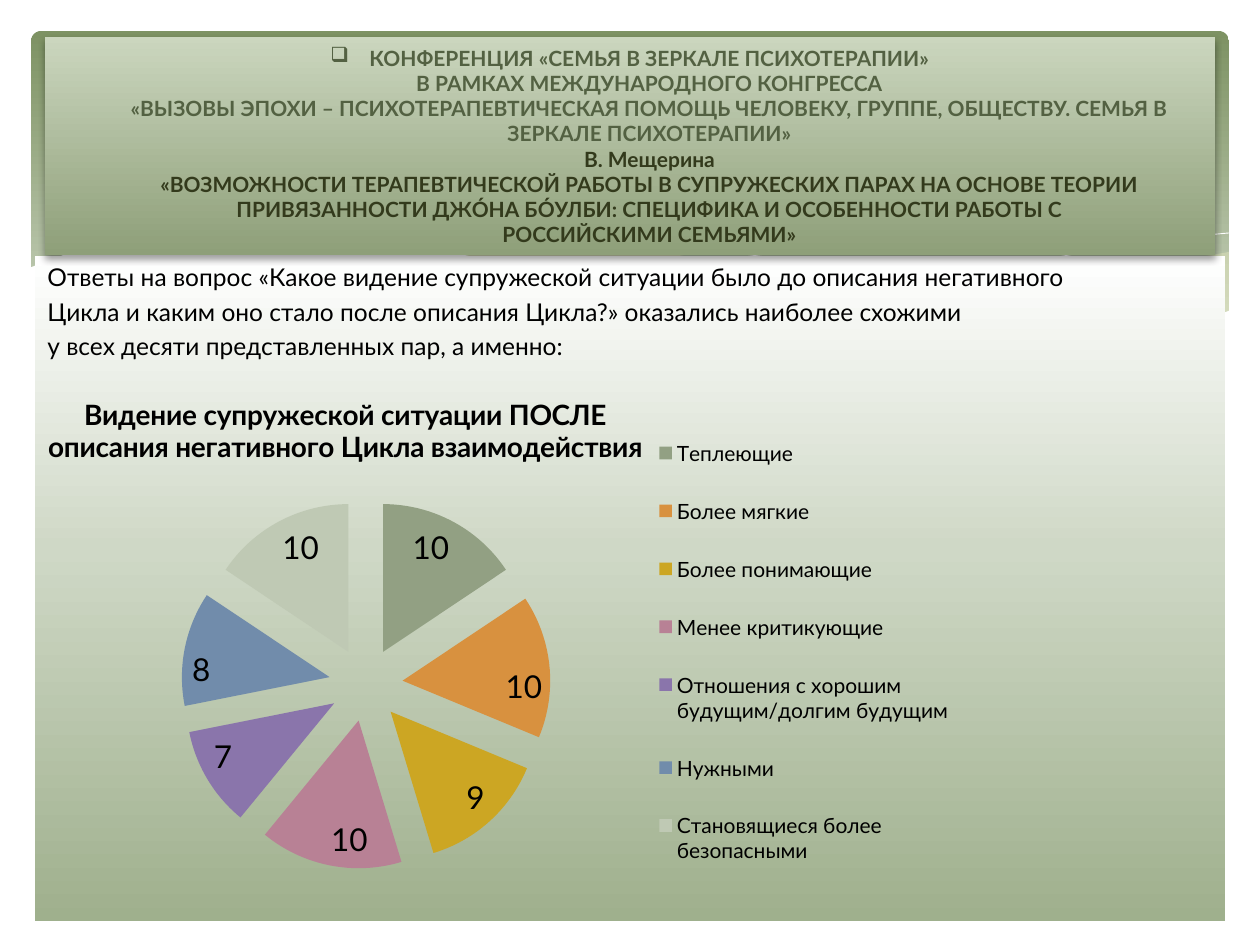
from lxml.etree import SubElement
from pptx import Presentation
from pptx.chart.data import CategoryChartData
from pptx.dml.color import RGBColor
from pptx.enum.chart import XL_CHART_TYPE, XL_LABEL_POSITION, XL_LEGEND_POSITION
from pptx.enum.shapes import MSO_SHAPE
from pptx.enum.text import MSO_ANCHOR, PP_ALIGN
from pptx.oxml.ns import qn
from pptx.util import Pt

PX = 7257  # EMU in one px, 126 px to the inch

THEME = {
    "font": "Lato",
    "text": "000000",
    "heading": "536142",
    "talk": "333A1C",
    "wave": "FEFAC9",
    "white": "FFFFFF",
    "frame": [(0, "7D9263"), (90, "C9D3BE")],
    "title_fill": [(0, "CBD6BE"), (100, "8E9F79")],
    "body_fill": [(0, "FFFFFF"), (44, "CFD8C6"), (100, "9FB08D")],
    "slices": ["92A083", "D8913F", "CCA623", "B88195", "8A75AB", "718CAB", "BFC9B4"],
    "title_size": 12,
    "body_size": 14,
    "chart_title_size": 16,
    "value_size": 18,
    "legend_size": 12,
}


def add_gradient_box(kind, left, top, width, height, stops):
    """Add a shape without outline, filled from top to bottom."""
    shape = slide.shapes.add_shape(kind, left * PX, top * PX, width * PX, height * PX)
    shape.shadow.inherit = False
    shape.line.fill.background()
    shape.fill.gradient()
    gradient = shape._element.spPr.find(qn("a:gradFill"))
    for child in list(gradient):
        gradient.remove(child)
    stop_list = SubElement(gradient, qn("a:gsLst"))
    for position, color in stops:
        stop = SubElement(stop_list, qn("a:gs"), pos=str(position * 1000))
        SubElement(stop, qn("a:srgbClr"), val=color)
    SubElement(gradient, qn("a:lin"), ang="5400000", scaled="0")
    return shape


def set_layout(element, index, **factors):
    """Give a chart part a manual layout, in fractions of the chart."""
    for old in element.findall(qn("c:layout")):
        element.remove(old)
    layout = SubElement(element, qn("c:layout"))
    element.insert(index, layout)
    manual = SubElement(layout, qn("c:manualLayout"))
    if "w" in factors and index == 0:
        SubElement(manual, qn("c:layoutTarget"), val="inner")
    for axis in ("x", "y"):
        SubElement(manual, qn(f"c:{axis}Mode"), val="edge")
    for name, value in factors.items():
        SubElement(manual, qn(f"c:{name}"), val=str(value))


presentation = Presentation()
presentation.slide_width = 1260 * PX
presentation.slide_height = 945 * PX
slide = presentation.slides.add_slide(presentation.slide_layouts[6])

# Rounded frame and the waves that close it
frame = add_gradient_box(MSO_SHAPE.ROUNDED_RECTANGLE, 31, 31, 1198, 340, THEME["frame"])
frame.adjustments[0] = 0.03

# points, fill, opacity in percent; a wave without fill is a white line
waves = [
    ([(1229, 252), (1159, 264), (1085, 281), (949, 312), (833, 334), (922, 345),
      (1026, 350), (1121, 343), (1178, 329), (1229, 311)], "wave", 29),
    ([(1125, 344), (1018, 328), (890, 302), (755, 270), (648, 249), (529, 235),
      (433, 233), (360, 241), (456, 256), (566, 280), (713, 312), (838, 335),
      (942, 347), (1043, 350), (1125, 344)], "wave", 40),
    ([(389, 246), (457, 238), (524, 236), (616, 239), (701, 248), (801, 262),
      (916, 285), (1047, 316), (1143, 343)], None, 100),
    ([(772, 324), (876, 296), (978, 272), (1091, 251), (1164, 239), (1229, 233)], None, 100),
    ([(1231, 310), (1197, 323), (1146, 336), (1071, 346), (980, 348), (867, 340),
      (760, 325), (667, 301), (563, 277), (460, 254), (368, 240), (290, 233),
      (203, 232), (134, 238), (74, 251), (29, 268), (29, 415), (1231, 415)], "white", 100),
]
for points, fill, opacity in waves:
    builder = slide.shapes.build_freeform(*points[0], scale=PX)
    builder.add_line_segments(points[1:], close=fill is not None)
    wave = builder.convert_to_shape()
    wave.shadow.inherit = False
    if fill is None:
        wave.fill.background()
        wave.line.color.rgb = RGBColor.from_string(THEME["white"])
        wave.line.width = Pt(0.5)
        continue
    wave.line.fill.background()
    wave.fill.solid()
    wave.fill.fore_color.rgb = RGBColor.from_string(THEME[fill])
    if opacity < 100:
        color = wave._element.spPr.find(qn("a:solidFill")).find(qn("a:srgbClr"))
        SubElement(color, qn("a:alpha"), val=str(opacity * 1000))

# Question panel
body = add_gradient_box(MSO_SHAPE.RECTANGLE, 35, 256, 1190, 665, THEME["body_fill"])
body.text_frame.word_wrap = True
body.text_frame.vertical_anchor = MSO_ANCHOR.TOP
body.text_frame.text = (
    "Ответы на вопрос «Какое видение супружеской ситуации было до описания негативного\n"
    "Цикла и каким оно стало после описания Цикла?» оказались наиболее схожими\n"
    "у всех десяти представленных пар, а именно:"
)
for number, paragraph in enumerate(body.text_frame.paragraphs):
    paragraph.alignment = PP_ALIGN.LEFT
    paragraph.space_before = Pt(2.8 if number else 0)
    font = paragraph.runs[0].font
    font.name = THEME["font"]
    font.size = Pt(THEME["body_size"])
    font.color.rgb = RGBColor.from_string(THEME["text"])

# Conference title with its shadow
title = add_gradient_box(MSO_SHAPE.RECTANGLE, 45, 37, 1170, 218, THEME["title_fill"])
shadow = SubElement(title._element.spPr.find(qn("a:effectLst")), qn("a:outerShdw"),
                    blurRad="50800", dist="25400", dir="5400000", rotWithShape="0")
shadow_color = SubElement(shadow, qn("a:srgbClr"), val="000000")
SubElement(shadow_color, qn("a:alpha"), val="38000")

heading_lines = [
    "КОНФЕРЕНЦИЯ «СЕМЬЯ В ЗЕРКАЛЕ ПСИХОТЕРАПИИ»",
    "В РАМКАХ МЕЖДУНАРОДНОГО КОНГРЕССА",
    "«ВЫЗОВЫ ЭПОХИ – ПСИХОТЕРАПЕВТИЧЕСКАЯ ПОМОЩЬ ЧЕЛОВЕКУ, ГРУППЕ, ОБЩЕСТВУ. "
    "СЕМЬЯ В ЗЕРКАЛЕ ПСИХОТЕРАПИИ»",
]
talk_lines = [
    "В. Мещерина",
    "«ВОЗМОЖНОСТИ ТЕРАПЕВТИЧЕСКОЙ РАБОТЫ В СУПРУЖЕСКИХ ПАРАХ НА ОСНОВЕ ТЕОРИИ",
    "ПРИВЯЗАННОСТИ ДЖО́НА БО́УЛБИ: СПЕЦИФИКА И ОСОБЕННОСТИ РАБОТЫ С",
    "РОССИЙСКИМИ СЕМЬЯМИ»",
]
title.text_frame.word_wrap = True
title.text_frame.vertical_anchor = MSO_ANCHOR.MIDDLE
paragraph = title.text_frame.paragraphs[0]
paragraph.text = "\v".join(heading_lines + talk_lines)
paragraph.alignment = PP_ALIGN.CENTER
properties = paragraph._p.get_or_add_pPr()
properties.set("marL", str(39 * PX))
properties.set("indent", str(-39 * PX))
SubElement(properties, qn("a:buChar"), char="❑")
for number, run in enumerate(paragraph.runs):
    run.font.name = THEME["font"]
    run.font.size = Pt(THEME["title_size"])
    run.font.bold = True
    color = THEME["heading" if number < len(heading_lines) else "talk"]
    run.font.color.rgb = RGBColor.from_string(color)
for line_break in paragraph._p.findall(qn("a:br")):
    SubElement(line_break, qn("a:rPr"), sz=str(THEME["title_size"] * 100))

# Pie of the answers
answers = {
    "Теплеющие": 10,
    "Более мягкие": 10,
    "Более понимающие": 9,
    "Менее критикующие": 10,
    "Отношения с хорошим будущим/долгим будущим": 7,
    "Нужными": 8,
    "Становящиеся более безопасными": 10,
}
chart_data = CategoryChartData()
chart_data.categories = list(answers)
chart_data.add_series("Series 1", list(answers.values()))
chart = slide.shapes.add_chart(
    XL_CHART_TYPE.PIE, 35 * PX, 375 * PX, 932 * PX, 543 * PX, chart_data
).chart
chart.font.name = THEME["font"]
chart.font.size = Pt(THEME["value_size"])
chart.font.color.rgb = RGBColor.from_string(THEME["text"])

chart.has_title = True
chart.chart_title.text_frame.text = (
    "Видение супружеской ситуации ПОСЛЕ\nописания негативного Цикла взаимодействия"
)
for paragraph in chart.chart_title.text_frame.paragraphs:
    font = paragraph.runs[0].font
    font.name = THEME["font"]
    font.size = Pt(THEME["chart_title_size"])
    font.bold = True
    font.color.rgb = RGBColor.from_string(THEME["text"])

chart.has_legend = True
chart.legend.position = XL_LEGEND_POSITION.RIGHT
chart.legend.include_in_layout = False
chart.legend.font.name = THEME["font"]
chart.legend.font.size = Pt(THEME["legend_size"])
chart.legend.font.color.rgb = RGBColor.from_string(THEME["text"])

plot = chart.plots[0]
plot.vary_by_categories = True
plot.has_data_labels = True
plot.data_labels.show_value = True
plot.data_labels.show_percentage = False
plot.data_labels.position = XL_LABEL_POSITION.INSIDE_END
series = plot.series[0]
for number, color in enumerate(THEME["slices"]):
    fill = series.points[number].format.fill
    fill.solid()
    fill.fore_color.rgb = RGBColor.from_string(color)
explosion = SubElement(series._element, qn("c:explosion"), val="25")
series._element.find(qn("c:dPt")).addprevious(explosion)

set_layout(chart._chartSpace.chart.plotArea, 0, x=0.06, y=0.23, w=0.59, h=0.68)
set_layout(chart.chart_title._element, 1, x=0.01, y=0.03)
set_layout(chart.legend._element, 1, x=0.66, y=0.06, w=0.33, h=0.9)

presentation.save("out.pptx")
